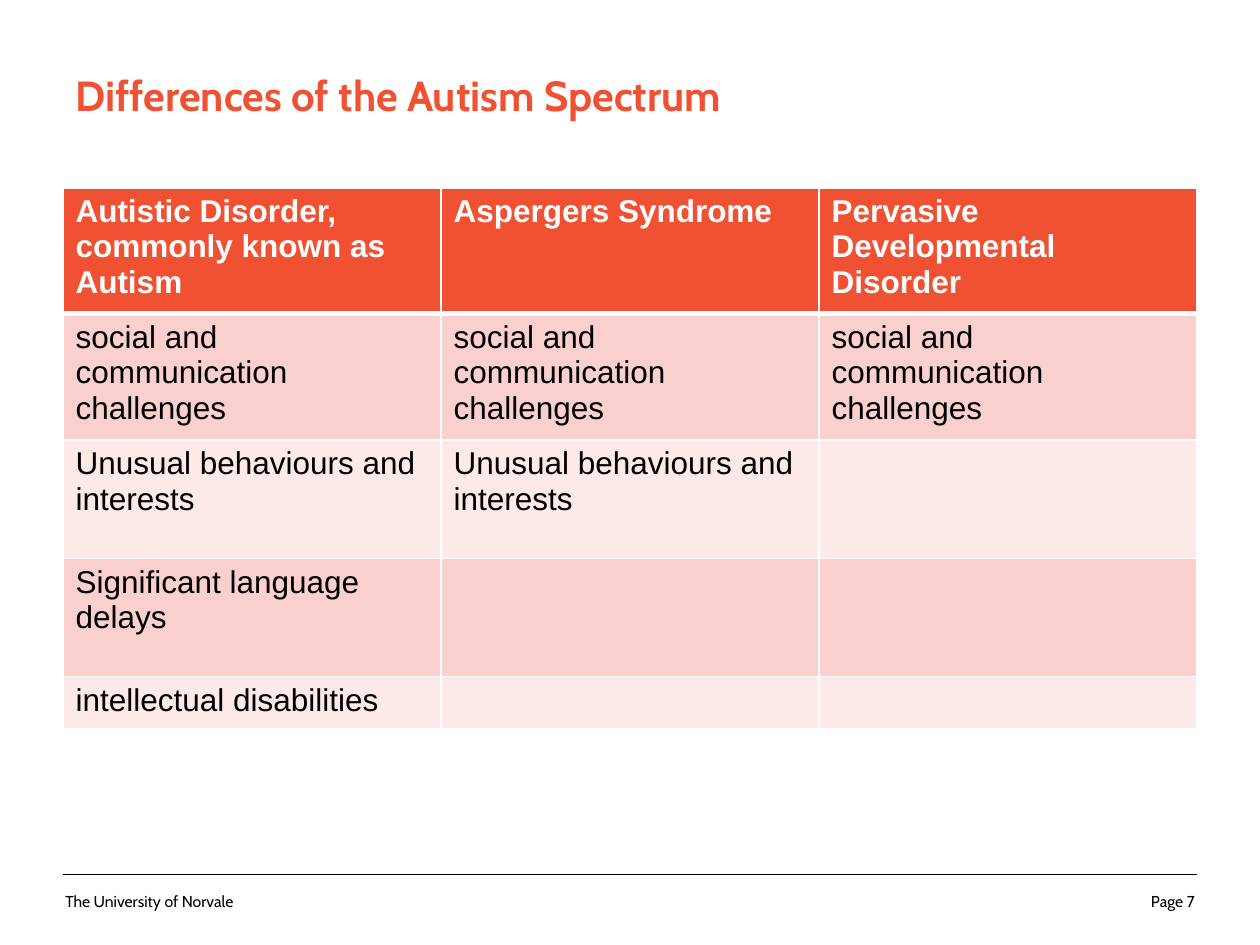
from dataclasses import dataclass

from lxml import etree
from pptx import Presentation
from pptx.dml.color import RGBColor
from pptx.enum.shapes import MSO_CONNECTOR
from pptx.enum.text import MSO_ANCHOR, PP_ALIGN
from pptx.oxml.ns import qn
from pptx.util import Inches, Pt

STRAIGHT = MSO_CONNECTOR.STRAIGHT
MIDDLE = MSO_ANCHOR.MIDDLE
LEFT, RIGHT = PP_ALIGN.LEFT, PP_ALIGN.RIGHT

COLORS = {
    "accent": "F05133",
    "band_dark": "F9D0CE",
    "band_light": "FCE9E8",
    "white": "FFFFFF",
    "black": "000000",
}
MARGIN, CONTENT_WIDTH = 0.5, 9
TABLE_TOP = 1.49
ROW_HEIGHTS = [0.41, 0.41, 0.94, 0.94, 0.41]
CHALLENGES = "social and communication challenges"
BEHAVIOURS = "Unusual behaviours and interests"
DISORDERS = [
    ["Autistic Disorder, commonly known as Autism", "Aspergers Syndrome",
     "Pervasive Developmental Disorder"],
    [CHALLENGES, CHALLENGES, CHALLENGES],
    [BEHAVIOURS, BEHAVIOURS, ""],
    ["Significant language delays", "", ""],
    ["intellectual disabilities", "", ""],
]


@dataclass
class Label:
    text: str
    left: float
    top: float
    width: float
    height: float
    size: float = 9
    color: str = "black"
    bold: bool = False
    align: PP_ALIGN = LEFT


LABELS = [
    Label("The University of Norvale", 0.42, 6.95, 2.33, 0.4),
    Label("Page 7", 7.25, 6.95, 2.33, 0.4, align=RIGHT),
    Label("Differences of the Autism Spectrum", MARGIN, 0.13, CONTENT_WIDTH, 1.25,
          size=24, color="accent", bold=True),
]


def rgb(name: str) -> RGBColor:
    return RGBColor.from_string(COLORS[name])


def write(frame, text: str, *, size: float, font: str, color: str,
          bold: bool = False, align: PP_ALIGN = LEFT) -> None:
    frame.word_wrap = True
    paragraph = frame.paragraphs[0]
    paragraph.alignment = align
    paragraph.font.size = Pt(size)
    if not text:
        return
    run = paragraph.add_run()
    run.text = text
    run.font.size = Pt(size)
    run.font.name = font
    run.font.bold = bold
    run.font.color.rgb = rgb(color)


def draw_label(slide, label: Label) -> None:
    box = slide.shapes.add_textbox(Inches(label.left), Inches(label.top),
                                   Inches(label.width), Inches(label.height))
    box.text_frame.vertical_anchor = MIDDLE
    write(box.text_frame, label.text, size=label.size, font="Cabin",
          color=label.color, bold=label.bold, align=label.align)


def draw_footer_rule(slide) -> None:
    rule = slide.shapes.add_connector(STRAIGHT, Inches(MARGIN), Inches(6.94),
                                      Inches(MARGIN + CONTENT_WIDTH), Inches(6.94))
    rule.line.color.rgb = rgb("black")
    rule.line.width = Pt(0.5)
    etree.SubElement(rule.element.spPr, qn("a:effectLst"))


def set_borders(cell, top: float, bottom: float) -> None:
    properties = cell._tc.get_or_add_tcPr()
    sides = {"lnL": 1, "lnR": 1, "lnT": top, "lnB": bottom}
    for position, (side, width) in enumerate(sides.items()):
        border = etree.Element(qn(f"a:{side}"), w=str(Pt(width)))
        fill = etree.SubElement(border, qn("a:solidFill"))
        etree.SubElement(fill, qn("a:srgbClr"), val=COLORS["white"])
        properties.insert(position, border)


def draw_disorder_table(slide) -> None:
    table = slide.shapes.add_table(
        len(DISORDERS), len(DISORDERS[0]), Inches(MARGIN), Inches(TABLE_TOP),
        Inches(CONTENT_WIDTH), Inches(sum(ROW_HEIGHTS))).table
    for row_index, (texts, height) in enumerate(zip(DISORDERS, ROW_HEIGHTS)):
        header = row_index == 0
        band = "band_dark" if row_index % 2 else "band_light"
        table.rows[row_index].height = Inches(height)
        for column_index, text in enumerate(texts):
            cell = table.cell(row_index, column_index)
            cell.fill.solid()
            cell.fill.fore_color.rgb = rgb("accent" if header else band)
            set_borders(cell, top=3 if row_index == 1 else 1, bottom=3 if header else 1)
            write(cell.text_frame, text, size=18, font="Arial",
                  color="white" if header else "black", bold=header)


def main() -> None:
    presentation = Presentation()
    presentation.slide_width = Inches(10)
    presentation.slide_height = Inches(7.5)
    slide = presentation.slides.add_slide(presentation.slide_layouts[6])
    draw_footer_rule(slide)
    for label in LABELS:
        draw_label(slide, label)
    draw_disorder_table(slide)
    presentation.save("out.pptx")


if __name__ == "__main__":
    main()
